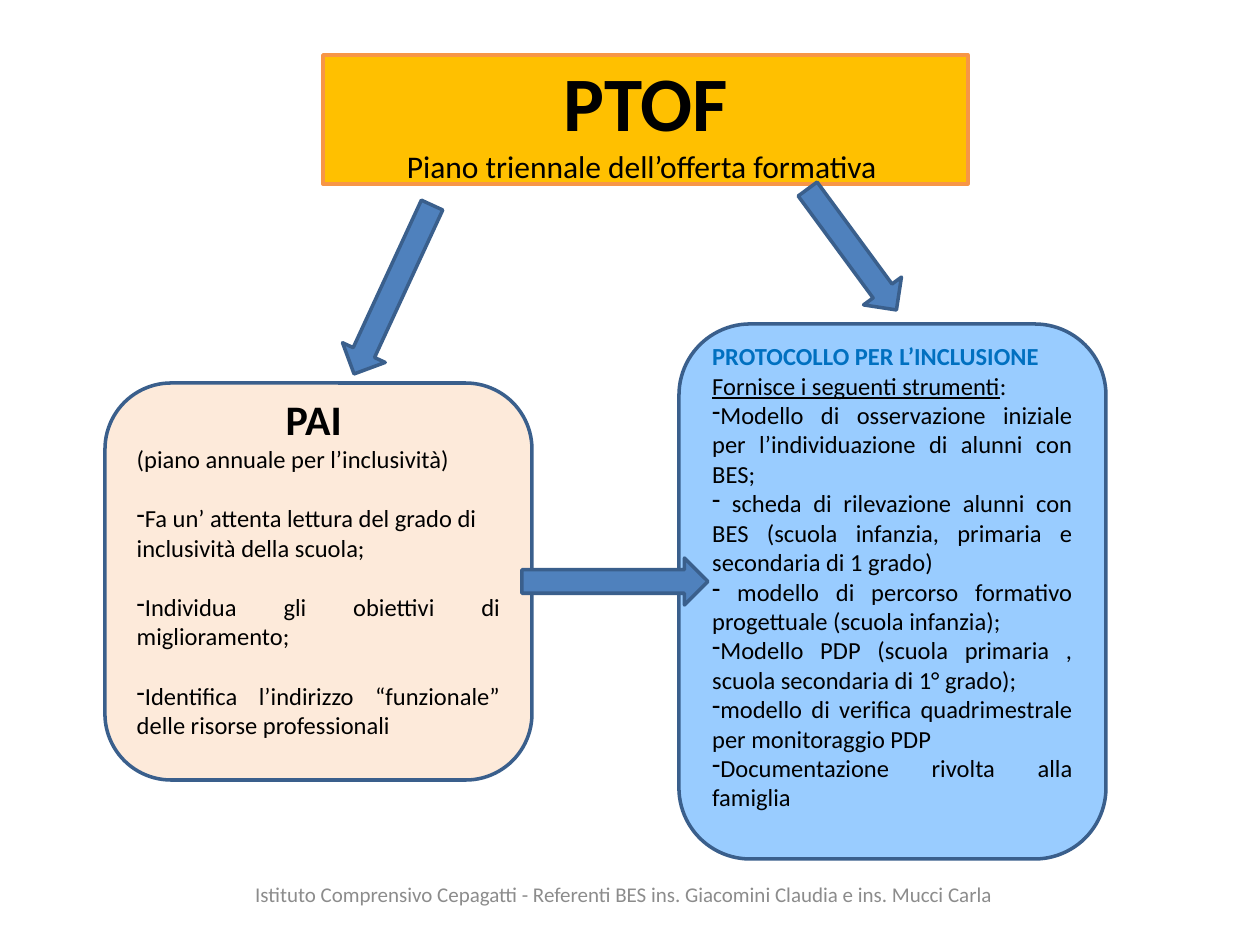
"""Build the slide that links the PTOF to the PAI and the inclusion protocol."""
from dataclasses import dataclass

from lxml.etree import SubElement
from pptx import Presentation
from pptx.dml.color import RGBColor
from pptx.enum.shapes import MSO_SHAPE
from pptx.enum.text import MSO_ANCHOR, MSO_AUTO_SIZE, PP_ALIGN
from pptx.oxml.ns import qn
from pptx.util import Emu, Pt


@dataclass(frozen=True)
class Theme:
    font: str = "Calibri"
    ink: str = "000000"
    muted: str = "8C8C8C"
    accent: str = "0070C0"
    gold: str = "FFC000"
    orange: str = "F79646"
    blue: str = "4F81BD"
    outline: str = "3A5F8C"
    peach: str = "FDEADA"
    sky: str = "99CCFF"
    title: int = 44
    heading: int = 24
    subtitle: int = 18
    body: int = 14
    footer: int = 12
    line: int = 2
    gap: int = 17


class SlideBuilder:
    scale = 914400 / 126

    def __init__(self, presentation, theme):
        self.theme = theme
        self.slide = presentation.slides.add_slide(presentation.slide_layouts[5])

    def px(self, length):
        return Emu(round(length * self.scale))

    def place(self, shape, box):
        shape.left, shape.top, shape.width, shape.height = map(self.px, box)

    def paint(self, shape, fill, outline):
        shape.fill.solid()
        shape.fill.fore_color.rgb = RGBColor.from_string(fill)
        shape.line.color.rgb = RGBColor.from_string(outline)
        shape.line.width = Pt(self.theme.line)

    def frame(self, shape, lines):
        text_frame = shape.text_frame
        text_frame.text = "\n".join(lines)
        text_frame.word_wrap = True
        text_frame.auto_size = MSO_AUTO_SIZE.NONE
        text_frame.vertical_anchor = MSO_ANCHOR.MIDDLE
        return text_frame

    def style(self, paragraph, size, align, color=None, bold=False):
        paragraph.alignment = align
        for run in paragraph.runs:
            run.font.name = self.theme.font
            run.font.size = Pt(size)
            run.font.bold = bold
            run.font.color.rgb = RGBColor.from_string(color or self.theme.ink)

    def title(self, box, name, meaning):
        banner = self.slide.shapes.title
        self.place(banner, box)
        self.paint(banner, self.theme.gold, self.theme.orange)
        heading, subtitle = self.frame(banner, [name, meaning]).paragraphs
        self.style(heading, self.theme.title, PP_ALIGN.CENTER, bold=True)
        self.style(subtitle, self.theme.subtitle, PP_ALIGN.CENTER)

    def card(self, box, fill, lines):
        card = self.slide.shapes.add_shape(
            MSO_SHAPE.ROUNDED_RECTANGLE, *map(self.px, box))
        card.shadow.inherit = False
        self.paint(card, fill, self.theme.outline)
        text_frame = self.frame(card, lines)
        text_frame.margin_bottom = self.px(36)
        for paragraph in text_frame.paragraphs:
            self.style(paragraph, self.theme.body, PP_ALIGN.JUSTIFY)
        return text_frame.paragraphs

    def dash(self, paragraph, gap=0):
        paragraph.space_before = Pt(gap)
        properties = paragraph._p.get_or_add_pPr()
        properties.set("marL", "0")
        properties.set("indent", "0")
        SubElement(properties, qn("a:buFontTx"))
        SubElement(properties, qn("a:buChar")).set("char", "-")

    def arrow(self, box, rotation=0):
        arrow = self.slide.shapes.add_shape(
            MSO_SHAPE.RIGHT_ARROW, *map(self.px, box))
        arrow.shadow.inherit = False
        arrow.rotation = rotation
        self.paint(arrow, self.theme.blue, self.theme.outline)

    def footer(self, box, text):
        credit = self.slide.shapes.add_textbox(*map(self.px, box))
        paragraph = self.frame(credit, [text]).paragraphs[0]
        self.style(paragraph, self.theme.footer, PP_ALIGN.CENTER, self.theme.muted)


def main():
    theme = Theme()
    presentation = Presentation()
    builder = SlideBuilder(presentation, theme)
    presentation.slide_width = builder.px(1260)
    presentation.slide_height = builder.px(945)

    builder.footer((123, 869, 1002, 50),
                   "Istituto Comprensivo Cepagatti - Referenti BES ins. "
                   "Giacomini Claudia e ins. Mucci Carla")
    builder.title((323, 55, 645, 129), "PTOF",
                  "Piano triennale dell’offerta formativa ")
    builder.arrow((300, 266, 186, 47), 114.8)
    builder.arrow((777, 226, 150, 47), 53.7)

    name, meaning, *tasks = builder.card((105, 383, 427, 397), theme.peach, [
        "PAI ",
        "(piano annuale per l’inclusività)",
        "Fa un’ attenta lettura del grado di inclusività della scuola;",
        "Individua gli obiettivi di miglioramento;",
        "Identifica l’indirizzo “funzionale” delle risorse professionali",
    ])
    builder.style(name, theme.heading, PP_ALIGN.CENTER, bold=True)
    meaning.alignment = tasks[0].alignment = PP_ALIGN.LEFT
    for task in tasks:
        builder.dash(task, theme.gap)

    protocol, intro, *tools = builder.card((679, 324, 427, 535), theme.sky, [
        "PROTOCOLLO PER L’INCLUSIONE",
        "Fornisce i seguenti strumenti",
        "Modello di osservazione iniziale per l’individuazione di alunni con BES;",
        " scheda di rilevazione alunni con BES (scuola infanzia, primaria e "
        "secondaria di 1 grado)",
        " modello di percorso formativo progettuale (scuola infanzia);",
        "Modello PDP (scuola primaria , scuola secondaria di 1° grado);",
        "modello di verifica quadrimestrale per monitoraggio PDP",
        "Documentazione rivolta alla famiglia",
    ])
    builder.style(protocol, theme.body, PP_ALIGN.JUSTIFY, theme.accent, bold=True)
    intro.add_run().text = ":"
    builder.style(intro, theme.body, PP_ALIGN.JUSTIFY)
    intro.runs[0].font.underline = True
    for tool in tools:
        builder.dash(tool)

    builder.arrow((522, 558, 186, 47))
    presentation.save("out.pptx")


if __name__ == "__main__":
    main()
